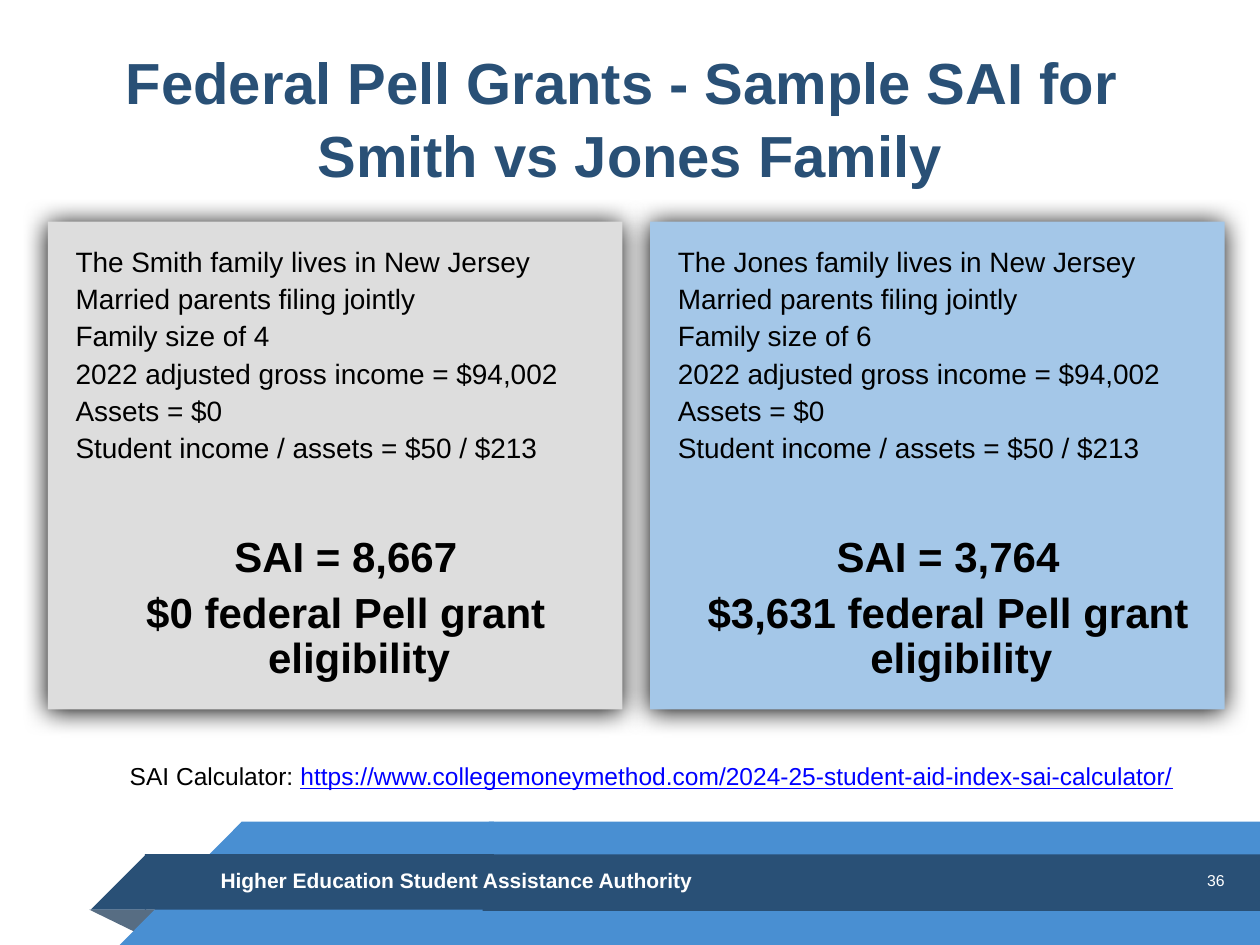
from lxml.etree import SubElement
from pptx import Presentation
from pptx.dml.color import RGBColor
from pptx.enum.shapes import MSO_SHAPE
from pptx.enum.text import MSO_ANCHOR, PP_ALIGN
from pptx.oxml.ns import qn
from pptx.util import Inches, Pt

COLORS = {
    "navy": "295076", "blue": "498FD2", "fold": "576D83", "grey": "DDDDDD",
    "sky": "A4C7E8", "white": "FFFFFF", "black": "000000", "link": "0000FF",
}


class SlideBuilder:
    """Draws styled elements on the current slide."""

    def __init__(self, slide, font="Arial"):
        self.slide = slide
        self.font = font

    def paint(self, shape, color):
        shape.shadow.inherit = False
        shape.fill.solid()
        shape.fill.fore_color.rgb = RGBColor.from_string(COLORS[color])
        shape.line.fill.background()
        return shape

    def rect(self, box, color):
        place = [Inches(length) for length in box]
        return self.paint(self.slide.shapes.add_shape(MSO_SHAPE.RECTANGLE, *place), color)

    def polygon(self, points, color):
        start, *rest = [(Inches(x), Inches(y)) for x, y in points]
        outline = self.slide.shapes.build_freeform(*start, scale=1.0)
        outline.add_line_segments(rest, close=True)
        return self.paint(outline.convert_to_shape(), color)

    def frame(self, shape, anchor=MSO_ANCHOR.MIDDLE):
        frame = shape.text_frame
        frame.word_wrap = True
        frame.vertical_anchor = anchor
        frame.margin_left = frame.margin_right = Inches(0.05)
        frame.margin_top = frame.margin_bottom = Inches(0.05)
        return frame

    def run(self, paragraph, text, size, color="black", bold=False, underline=False):
        run = paragraph.add_run()
        run.text = text
        run.font.name = self.font
        run.font.size = Pt(size)
        run.font.bold = bold
        run.font.underline = underline
        run.font.color.rgb = RGBColor.from_string(COLORS[color])

    def label(self, box, lines, size, color, align=PP_ALIGN.LEFT, bold=False, spacing=1.0):
        place = [Inches(length) for length in box]
        paragraph = self.frame(self.slide.shapes.add_textbox(*place)).paragraphs[0]
        paragraph.alignment = align
        paragraph.line_spacing = spacing
        for index, line in enumerate(lines):
            if index:
                paragraph.add_line_break()
            self.run(paragraph, line, size, color, bold)

    def glow(self, shape):
        effects = shape._element.spPr.find(qn("a:effectLst"))
        shadow = SubElement(effects, qn("a:outerShdw"), blurRad=str(Pt(15)),
                            dist=str(Pt(1)), dir="5400000", algn="t", rotWithShape="0")
        SubElement(shadow, qn("a:srgbClr"), val=COLORS["black"])

    def panel(self, left, color, facts, results):
        card = self.rect((left, 1.76, 4.56, 3.87), color)
        self.glow(card)
        frame = self.frame(card)
        for index, text in enumerate(facts + results):
            paragraph = frame.add_paragraph() if index else frame.paragraphs[0]
            is_result = index >= len(facts)
            margin, indent = (0.38, -0.21) if is_result else (0, 0.17)
            properties = paragraph._p.get_or_add_pPr()
            properties.set("marL", str(Inches(margin)))
            properties.set("indent", str(Inches(indent)))
            paragraph.alignment = PP_ALIGN.CENTER if is_result else PP_ALIGN.LEFT
            paragraph.line_spacing = 0.9
            if index == len(facts):
                paragraph.space_before = Pt(41)
            elif index:
                paragraph.space_before = Pt(6 if is_result else 4)
            self.run(paragraph, text, 24 if is_result else 16, bold=is_result)

    def calculator(self, box, caption, address):
        strip = self.rect(box, "white")
        paragraph = self.frame(strip, MSO_ANCHOR.TOP).paragraphs[0]
        paragraph.alignment = PP_ALIGN.LEFT
        self.run(paragraph, caption, 14)
        self.run(paragraph, address, 14, "link", underline=True)


def family_facts(name, size):
    return [
        f"The {name} family lives in New Jersey",
        "Married parents filing jointly",
        f"Family size of {size}",
        "2022 adjusted gross income = $94,002",
        "Assets = $0",
        "Student income / assets = $50 / $213",
    ]


def main():
    deck = Presentation()
    deck.slide_width, deck.slide_height = Inches(10), Inches(7.5)
    builder = SlideBuilder(deck.slides.add_slide(deck.slide_layouts[6]))

    builder.rect((3.88, 6.52, 6.12, 0.98), "blue")
    builder.polygon([(1.29, 7.22), (1.1, 7.41), (0.71, 7.22)], "fold")
    builder.rect((1.92, 6.52, 2, 0.98), "blue")
    builder.polygon([(1.92, 7.5), (0.95, 7.5), (1.92, 6.52)], "blue")
    builder.rect((1.15, 6.78, 2.77, 0.44), "navy")
    builder.polygon([(1.16, 7.22), (0.72, 7.22), (1.16, 6.78)], "navy")
    builder.rect((3.83, 6.78, 6.17, 0.45), "navy")
    builder.label((1.7, 6.84, 4.22, 0.29), ["Higher Education Student Assistance Authority"],
                  12, "white", bold=True)
    builder.label((6.87, 6.86, 2.9, 0.25), ["36"], 9, "white", PP_ALIGN.RIGHT)

    builder.label((0.5, 0.3, 9, 1.25),
                  ["Federal Pell Grants - Sample SAI for ", "Smith vs Jones Family"],
                  33.1, "navy", PP_ALIGN.CENTER, bold=True, spacing=1.05)
    builder.calculator((0.98, 5.99, 9.44, 0.32), "SAI Calculator: ",
                       "https://www.collegemoneymethod.com/2024-25-student-aid-index-sai-calculator/")

    families = [("Smith", 4, "grey", "8,667", "$0"), ("Jones", 6, "sky", "3,764", "$3,631")]
    for index, (name, size, color, sai, grant) in enumerate(families):
        builder.panel(0.38 + index * 4.78, color, family_facts(name, size),
                      [f"SAI = {sai}", f"{grant} federal Pell grant eligibility"])

    deck.save("out.pptx")


if __name__ == "__main__":
    main()
